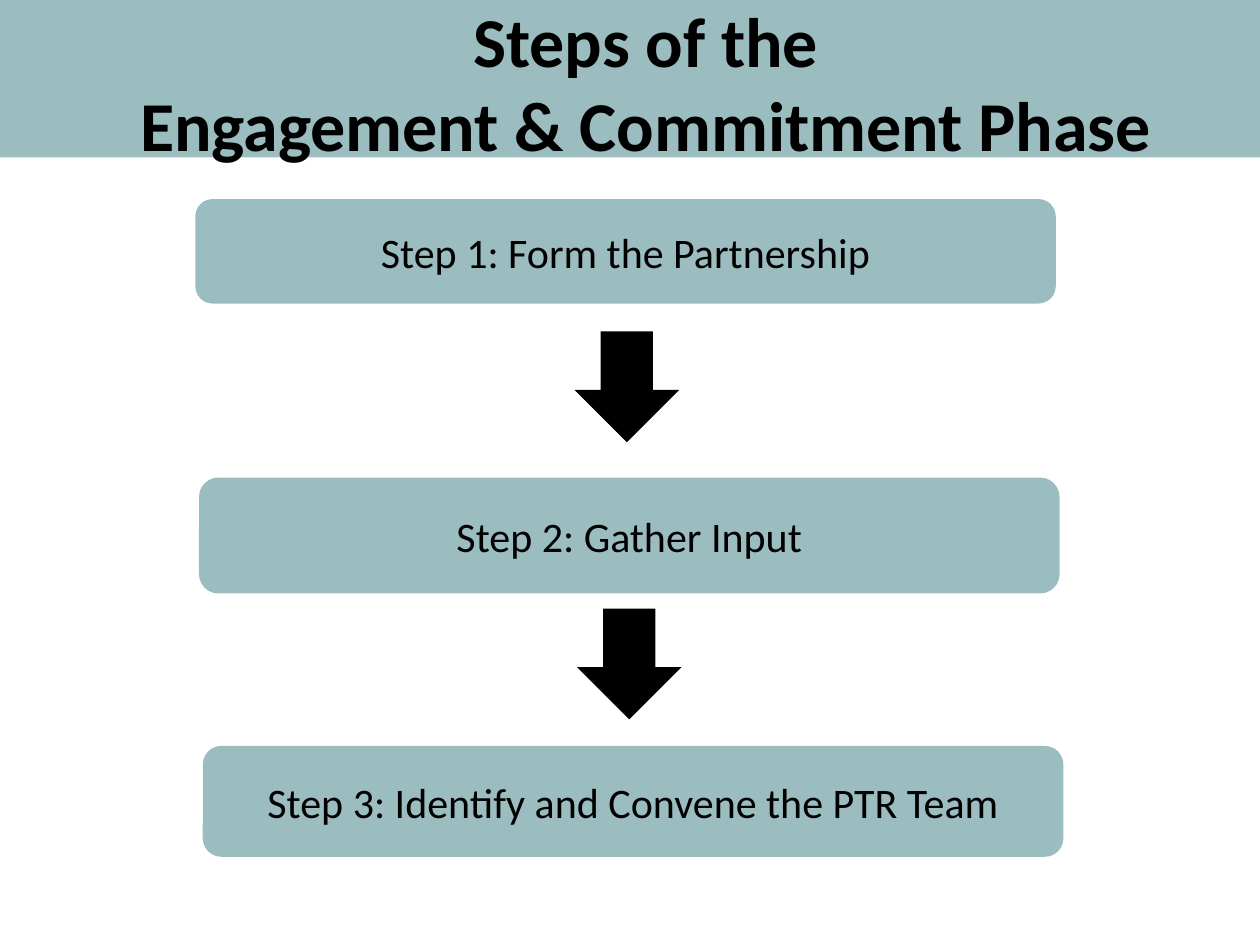
from dataclasses import dataclass

from pptx import Presentation
from pptx.dml.color import RGBColor
from pptx.enum.shapes import MSO_SHAPE
from pptx.enum.text import MSO_ANCHOR, PP_ALIGN
from pptx.util import Inches, Pt

COLUMNS, ROWS = 10, 7.5
COLUMN = ROW = Inches(1)
TEAL, BLACK = "9CBDC0", "000000"
FONT = "Calibri"
STEP_LEFT, STEP_SHIFT, STEP_WIDTH = 1.55, 0.03, 6.83
ARROW_WIDTH, ARROW_HEIGHT = 0.83, 0.88


@dataclass(frozen=True)
class Area:
    """A block of the grid, measured in columns and rows."""

    left: float
    top: float
    width: float
    height: float

    def lengths(self) -> tuple[int, int, int, int]:
        """Return the left, top, width and height as slide lengths."""
        return (
            round(self.left * COLUMN),
            round(self.top * ROW),
            round(self.width * COLUMN),
            round(self.height * ROW),
        )


@dataclass(frozen=True)
class Step:
    """A numbered step with its vertical position."""

    text: str
    top: float
    height: float


STEPS = [
    Step("Form the Partnership", 1.58, 0.83),
    Step("Gather Input", 3.79, 0.92),
    Step("Identify and Convene the PTR Team", 5.92, 0.88),
]
ARROWS = [
    Area(4.56, 2.63, ARROW_WIDTH, ARROW_HEIGHT),
    Area(4.58, 4.83, ARROW_WIDTH, ARROW_HEIGHT),
]


def color(value: str) -> RGBColor:
    """Turn a hex string into a colour."""
    return RGBColor.from_string(value)


def add_filled_shape(slide, kind: MSO_SHAPE, area: Area, fill: str):
    """Draw a flat preset shape without outline."""
    shape = slide.shapes.add_shape(kind, *area.lengths())
    shape.shadow.inherit = False
    shape.fill.solid()
    shape.fill.fore_color.rgb = color(fill)
    shape.line.fill.background()
    return shape


def write_lines(shape, lines: list[str], size: int, bold: bool, anchor: MSO_ANCHOR) -> None:
    """Write centred black paragraphs into a shape."""
    frame = shape.text_frame
    frame.word_wrap = True
    frame.vertical_anchor = anchor
    frame.text = "\n".join(lines)
    for paragraph in frame.paragraphs:
        paragraph.alignment = PP_ALIGN.CENTER
        paragraph.font.name = FONT
        paragraph.font.size = Pt(size)
        paragraph.font.bold = bold
        paragraph.font.color.rgb = color(BLACK)


def add_step(slide, index: int, step: Step) -> None:
    """Draw one step box, shifted slightly to the right of the one before."""
    area = Area(STEP_LEFT + index * STEP_SHIFT, step.top, STEP_WIDTH, step.height)
    box = add_filled_shape(slide, MSO_SHAPE.ROUNDED_RECTANGLE, area, TEAL)
    write_lines(box, [f"Step {index + 1}: {step.text}"], 24, False, MSO_ANCHOR.MIDDLE)


def add_title(slide, lines: list[str]) -> None:
    """Write the slide title over the banner."""
    title = slide.shapes.add_textbox(*Area(0.25, -0.07, 9.75, 1.45).lengths())
    write_lines(title, lines, 40, True, MSO_ANCHOR.TOP)


def main() -> None:
    """Build and save the slide."""
    presentation = Presentation()
    presentation.slide_width = round(COLUMNS * COLUMN)
    presentation.slide_height = round(ROWS * ROW)
    slide = presentation.slides.add_slide(presentation.slide_layouts[6])
    add_filled_shape(slide, MSO_SHAPE.RECTANGLE, Area(0, 0, COLUMNS, 1.25), TEAL)
    for index, step in enumerate(STEPS):
        add_step(slide, index, step)
    for area in ARROWS:
        add_filled_shape(slide, MSO_SHAPE.DOWN_ARROW, area, BLACK)
    add_title(slide, ["Steps of the", "Engagement & Commitment Phase"])
    presentation.save("out.pptx")


if __name__ == "__main__":
    main()
